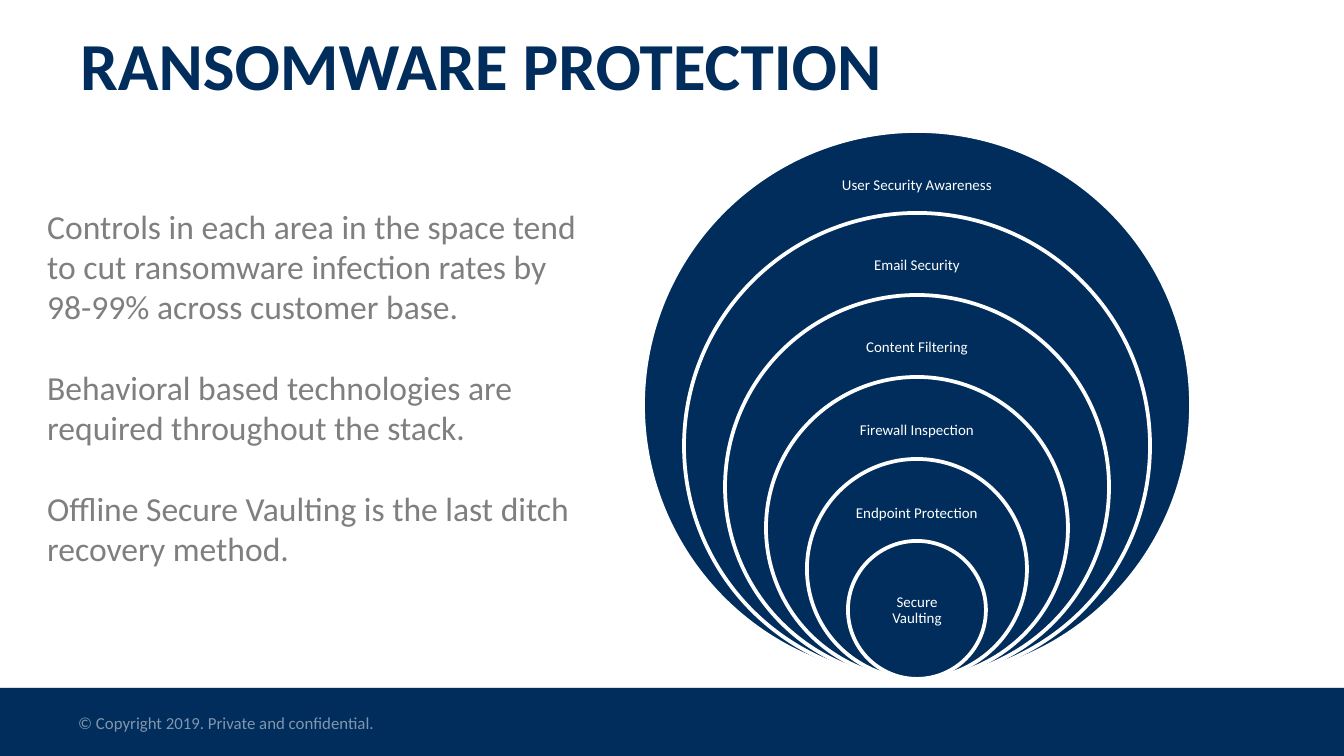
import pptx
import pptx.util
import pptx.dml.color
import pptx.enum.shapes
import pptx.enum.text
import pptx.oxml

COLORS = {"navy": "002D5B", "white": "FFFFFF", "gray": "7F7F7F", "footer": "8096AD"}
SHADOW = (
    '<a:effectLst xmlns:a="http://schemas.openxmlformats.org/drawingml/2006/main">'
    '<a:outerShdw blurRad="39370" dist="22860" dir="5400000" rotWithShape="0">'
    '<a:srgbClr val="000000"><a:alpha val="35000"/></a:srgbClr>'
    "</a:outerShdw></a:effectLst>"
)
ALIGN = pptx.enum.text.PP_ALIGN
ANCHOR = pptx.enum.text.MSO_ANCHOR
SHAPE = pptx.enum.shapes.MSO_SHAPE


def px(*lengths):
    return [pptx.util.Emu(round(length * 914400 / 134.4)) for length in lengths]


def add_text(shapes, box, lines, size, color, frame_format, paragraph_format, bold=False, gap=0):
    frame = shapes.add_textbox(*px(*box)).text_frame
    for name, value in {"word_wrap": True, **frame_format}.items():
        setattr(frame, name, value)
    for index, line in enumerate(lines):
        paragraph = frame.paragraphs[0] if index == 0 else frame.add_paragraph()
        paragraph.text = line
        if index:
            paragraph.space_before = pptx.util.Pt(gap)
        for name, value in paragraph_format.items():
            setattr(paragraph, name, value)
        font = paragraph.runs[0].font
        for name, value in {"name": "Calibri", "size": pptx.util.Pt(size), "bold": bold}.items():
            setattr(font, name, value)
        font.color.rgb = pptx.dml.color.RGBColor.from_string(COLORS[color])


presentation = pptx.Presentation()
presentation.slide_width, presentation.slide_height = px(1344, 756)
slide = presentation.slides.add_slide(presentation.slide_layouts[6])
navy = pptx.dml.color.RGBColor.from_string(COLORS["navy"])
white = pptx.dml.color.RGBColor.from_string(COLORS["white"])

footer = slide.shapes.add_shape(SHAPE.RECTANGLE, *px(0, 688, 1344, 68))
footer.fill.solid()
footer.fill.fore_color.rgb = navy
footer.line.fill.background()
footer._element.spPr.append(pptx.oxml.parse_xml(SHADOW))
add_text(slide.shapes, (65, 706, 454, 34), ["© Copyright 2019. Private and confidential."],
         9, "footer", {}, {})

layers = [
    ("User Security Awareness", 206, 186),
    ("Email Security", 200, 266),
    ("Content Filtering", 199, 348),
    ("Firewall Inspection", 163, 431),
    ("Endpoint Protection", 142, 514),
    ("Secure Vaulting", 97, 611),
]
center, bottom, outer_diameter, step, label_height = 917, 679, 548, 82, 54
inset = px(8)[0]
label_frame = {"vertical_anchor": ANCHOR.MIDDLE, "margin_left": inset, "margin_right": inset,
               "margin_top": inset, "margin_bottom": inset}
label_paragraph = {"alignment": ALIGN.CENTER, "line_spacing": 0.9,
                   "space_after": pptx.util.Pt(2.8)}
diagram = slide.shapes.add_group_shape()
for index, (label, width, middle) in enumerate(layers):
    diameter = outer_diameter - step * index
    circle = diagram.shapes.add_shape(
        SHAPE.OVAL, *px(center - diameter / 2, bottom - diameter, diameter, diameter))
    circle.shadow.inherit = False
    circle.fill.solid()
    circle.fill.fore_color.rgb = navy
    circle.line.color.rgb = white
    circle.line.width = pptx.util.Pt(2)
    add_text(diagram.shapes, (center - width / 2, middle - label_height / 2, width, label_height),
             [label], 8, "white", label_frame, label_paragraph)

add_text(slide.shapes, (67, 20, 1210, 102), ["RANSOMWARE PROTECTION"], 36, "navy",
         {"vertical_anchor": ANCHOR.MIDDLE}, {"line_spacing": 0.8}, bold=True)
add_text(slide.shapes, (34, 199, 563, 380), [
    "Controls in each area in the space tend to cut ransomware infection rates by "
    "98-99% across customer base.",
    "Behavioral based technologies are required throughout the stack.",
    "Offline Secure Vaulting is the last ditch recovery method.",
], 18, "gray", {}, {}, gap=21.6)

presentation.save("out.pptx")
